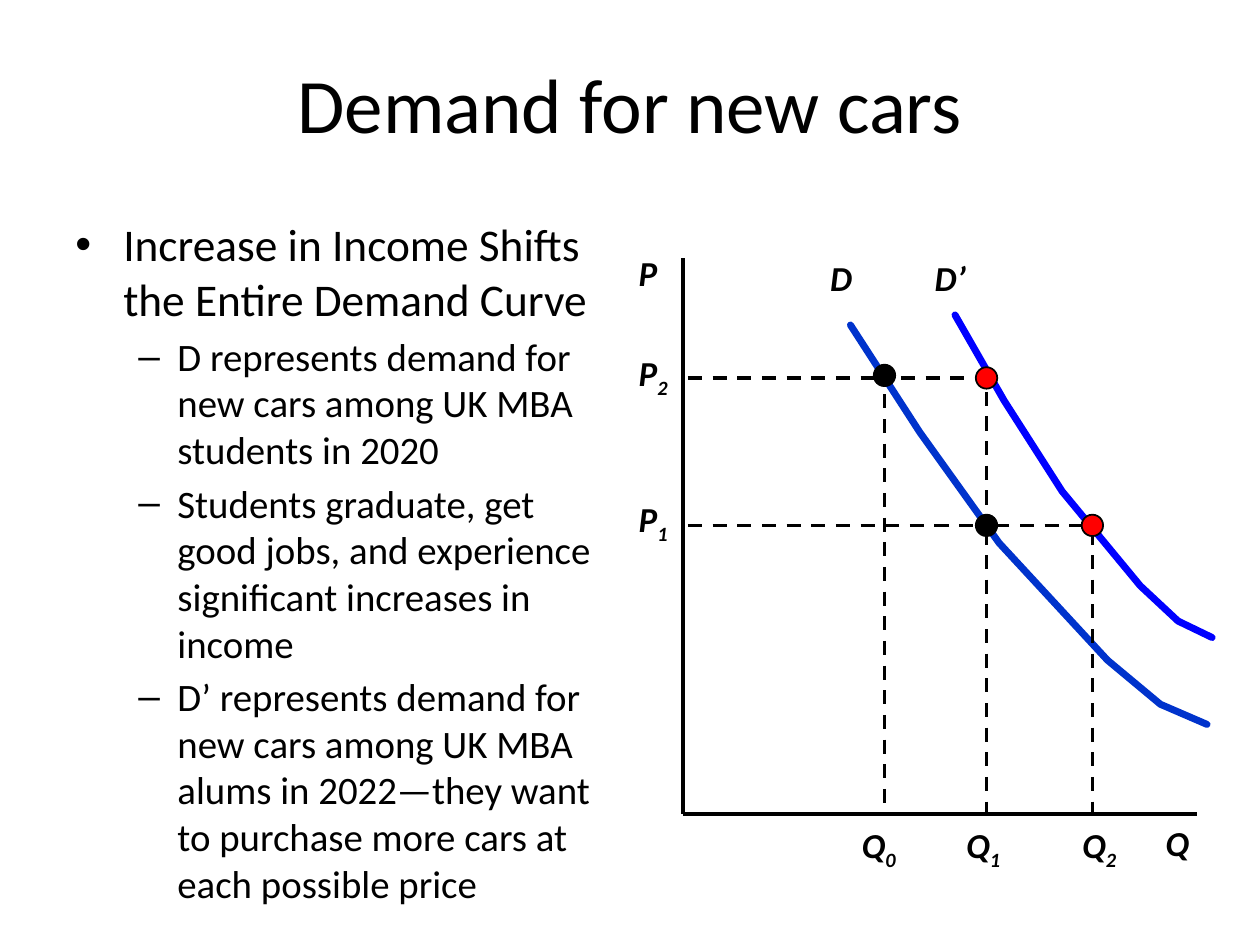
from pptx import Presentation
from pptx.dml.color import RGBColor as RGB
from pptx.enum.dml import MSO_LINE as Dash
from pptx.enum.shapes import MSO_CONNECTOR as Conn, MSO_SHAPE as Shape
from pptx.enum.text import MSO_ANCHOR as Anchor, PP_ALIGN as Align
from pptx.oxml.ns import qn
from pptx.util import Inches, Pt
from lxml.etree import SubElement as Sub

BLACK, RED = "000000", "FF0000"
BODY = [
    (0, "Increase in Income Shifts the Entire Demand Curve"),
    (1, "D represents demand for new cars among UK MBA students in 2020"),
    (1, "Students graduate, get good jobs, and experience significant "
        "increases in income"),
    (1, "D’ represents demand for new cars among UK MBA alums in 2022—they "
        "want to purchase more cars at each possible price"),
]
# Format of each outline level: mark, indent, hang, size, space before
LEVELS = [("•", 0.38, 0.38, 25.9, 4.3), ("–", 0.81, 0.31, 22.2, 4)]

# Places in the plot, in inches from its top left corner
Q0, Q1, Q2 = 1.6, 2.41, 3.25
P2, P1 = 0.95, 2.12
CURVES = [
    ("0033CC", [(1.33, 0.53), (1.88, 1.38), (2.51, 2.26),
                (3.37, 3.19), (3.79, 3.54), (4.16, 3.7)]),
    ("0000FF", [(2.16, 0.45), (2.55, 1.13), (3.01, 1.85),
                (3.63, 2.6), (3.93, 2.88), (4.2, 3.01)]),
]
DOTS = [(Q0, P2 - 0.02, BLACK), (Q1, P1, BLACK), (Q1, P2, RED), (Q2, P1, RED)]
LABELS = [
    ("P", "", -0.45, -0.1, 0.38), ("P", "2", -0.45, 0.69, 0.48),
    ("P", "1", -0.45, 1.85, 0.48), ("D", "", 1.07, -0.06, 0.4),
    ("D’", "", 1.9, -0.06, 0.48), ("Q", "0", 1.32, 4.44, 0.51),
    ("Q", "1", 2.15, 4.44, 0.51), ("Q", "2", 3.07, 4.44, 0.51),
    ("Q", "", 3.73, 4.42, 0.41),
]


def color(code):
    return RGB.from_string(code)


def style(run, size, **extra):
    look = dict(name="Calibri", size=Pt(size), **extra)
    for key, val in look.items():
        setattr(run.font, key, val)
    run.font.color.rgb = color(BLACK)


def stroke(line, code, width):
    line.color.rgb = color(code)
    line.width = Pt(width)


def add_title(slide, box, text):
    title = slide.shapes.title
    title.left, title.top, title.width, title.height = map(Inches, box)
    frame = title.text_frame
    frame.vertical_anchor = Anchor.MIDDLE
    para = frame.paragraphs[0]
    para.alignment = Align.CENTER
    run = para.add_run()
    run.text = text
    style(run, 44)


def add_body(slide, box, items):
    frame = slide.shapes.add_textbox(*map(Inches, box)).text_frame
    frame.word_wrap = True
    for num, (level, text) in enumerate(items):
        para = frame.add_paragraph() if num else frame.paragraphs[0]
        mark, left, hang, size, gap = LEVELS[level]
        para.level = level
        para.space_before = Pt(gap)
        props = para._p.get_or_add_pPr()
        props.set("marL", str(Inches(left)))
        props.set("indent", str(-Inches(hang)))
        Sub(props, qn("a:buFont"), typeface="Arial")
        Sub(props, qn("a:buChar"), char=mark)
        run = para.add_run()
        run.text = text
        style(run, size)


def add_plot(slide, box):
    """Draw axes, demand curves, guides, dots and labels around the plot box."""
    left, top, width, height = box
    shapes = slide.shapes

    def spot(x, y):
        return Inches(left + x), Inches(top + y)

    def add_line(start, end, dash=None):
        line = shapes.add_connector(Conn.STRAIGHT, *spot(*start), *spot(*end))
        stroke(line.line, BLACK, 2)
        line.line.dash_style = dash
        Sub(line._element.spPr, qn("a:effectLst"))

    def add_curve(code, points):
        first, *rest = [spot(*point) for point in points]
        path = shapes.build_freeform(*first)
        path.add_line_segments(rest, close=False)
        curve = path.convert_to_shape()
        curve.shadow.inherit = False
        curve.fill.background()
        stroke(curve.line, code, 4)
        pen = curve.line._get_or_add_ln()
        pen.set("cap", "rnd")
        Sub(pen, qn("a:round"))

    def add_dot(x, y, code, size=0.17):
        place = spot(x - size / 2, y - size / 2)
        dot = shapes.add_shape(Shape.OVAL, *place, Inches(size), Inches(size))
        dot.shadow.inherit = False
        dot.fill.solid()
        dot.fill.fore_color.rgb = color(code)
        stroke(dot.line, BLACK, 1)

    def add_label(text, sub, x, y, wide):
        label = shapes.add_textbox(*spot(x, y), Inches(wide), Inches(0.43))
        label.text_frame.word_wrap = False
        para = label.text_frame.paragraphs[0]
        for part, shift in ((text, 0), (sub, -25000)):
            if part:
                run = para.add_run()
                run.text = part
                style(run, 20, bold=True, italic=True)
                if shift:
                    run.font._element.set("baseline", str(shift))

    for curve in CURVES:
        add_curve(*curve)
    add_line((0, 0), (0, height))
    add_line((0, height), (width, height))
    guides = [
        ((0.04, P2), (Q0, P2)), ((Q0 + 0.13, P2), (Q1 - 0.1, P2)),
        ((0.04, P1), (Q1 - 0.08, P1)), ((Q1 + 0.07, P1), (Q2 - 0.02, P1)),
        ((Q1, P2 + 0.11), (Q1, P1 - 0.15)), ((Q0, P2 + 0.13), (Q0, height)),
        ((Q1, P1 + 0.04), (Q1, height)), ((Q2, P1 + 0.04), (Q2, height)),
    ]
    for start, end in guides:
        add_line(start, end, Dash.DASH)
    for dot in DOTS:
        add_dot(*dot)
    for label in LABELS:
        add_label(*label)


def main():
    deck = Presentation()
    deck.slide_width, deck.slide_height = Inches(10), Inches(7.5)
    slide = deck.slides.add_slide(deck.slide_layouts[5])
    add_title(slide, (0.5, 0.3, 9, 1.03), "Demand for new cars")
    add_body(slide, (0.5, 1.67, 4.42, 5.03), BODY)
    add_plot(slide, (5.42, 2.05, 4.08, 4.41))
    deck.save("out.pptx")


if __name__ == "__main__":
    main()
